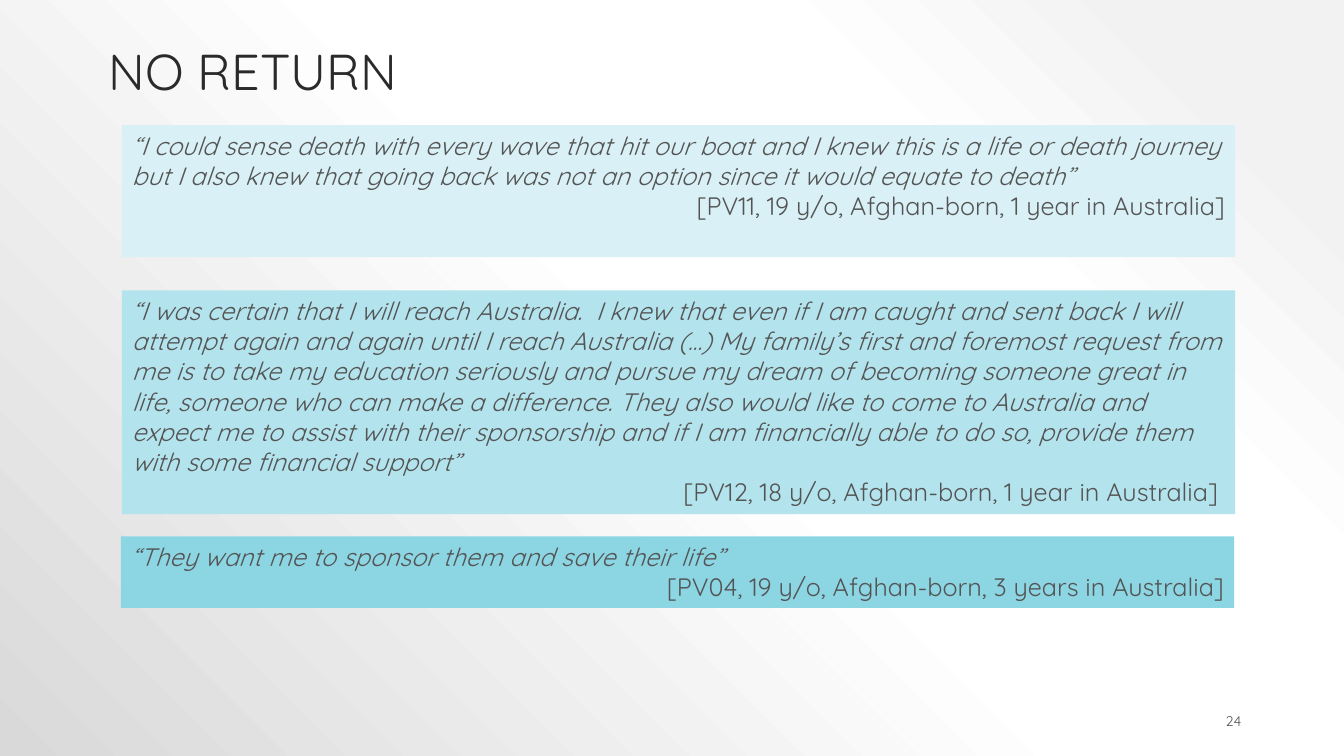
from pptx import Presentation
from pptx.dml.color import RGBColor
from pptx.enum.shapes import MSO_SHAPE
from pptx.enum.text import MSO_ANCHOR, PP_ALIGN
from pptx.oxml import parse_xml
from pptx.oxml.ns import nsdecls
from pptx.util import Inches, Pt

FONT = "Quicksand"
COLORS = {"title": "2A2A2A", "text": "545454",
          "pale": "D9F1F6", "mid": "B3E3ED", "deep": "8CD6E4"}
STOPS = [(10, "F2F2F2"), (28, "FFFFFF"), (48, "FFFFFF"), (100, "D9D9D9")]
TITLE = "NO RETURN"
NUMBER = "24"
WIDE = 11.04
QUOTES = [
    ("pale", 1.21, 1.24, 1.31,
     "“I could sense death with every wave that hit our boat and I knew this is a life or death "
     "journey but I also knew that going back was not an option since it would equate to death”",
     "[PV11, 19 y/o, Afghan-born, 1 year in Australia]"),
    ("mid", 1.21, 2.88, 2.22,
     "“I was certain that I will reach Australia.  I knew that even if I am caught and sent back "
     "I will attempt again and again until I reach Australia (…) My family’s first and foremost "
     "request from me is to take my education seriously and pursue my dream of becoming someone "
     "great in life, someone who can make a difference. They also would like to come to Australia "
     "and expect me to assist with their sponsorship and if I am financially able to do so, "
     "provide them with some financial support”",
     "[PV12, 18 y/o, Afghan-born, 1 year in Australia] "),
    ("deep", 1.2, 5.32, 0.71,
     "“They want me to sponsor them and save their life”",
     "[PV04, 19 y/o, Afghan-born, 3 years in Australia]"),
]


def write(para, text, size, color, align=PP_ALIGN.LEFT, italic=False):
    para.text = text
    para.alignment = align
    font = para.font
    font.name, font.size, font.italic = FONT, Pt(size), italic
    font.color.rgb = RGBColor.from_string(COLORS[color])


def paint(slide):
    stops = "".join(f'<a:gs pos="{pos * 1000}"><a:srgbClr val="{tone}"/></a:gs>'
                    for pos, tone in STOPS)
    back = parse_xml(
        f'<p:bg {nsdecls("p", "a")}><p:bgPr><a:gradFill rotWithShape="1">'
        f'<a:gsLst>{stops}</a:gsLst><a:path path="circle">'
        '<a:fillToRect l="100000" b="100000"/></a:path></a:gradFill>'
        '<a:effectLst/></p:bgPr></p:bg>')
    slide.element.cSld.insert(0, back)


def quote(slide, fill, left, top, high, words, source):
    box = slide.shapes.add_shape(
        MSO_SHAPE.RECTANGLE, Inches(left), Inches(top), Inches(WIDE), Inches(high))
    box.shadow.inherit = False
    box.fill.solid()
    box.fill.fore_color.rgb = RGBColor.from_string(COLORS[fill])
    box.line.fill.background()
    frame = box.text_frame
    frame.word_wrap = True
    frame.vertical_anchor = MSO_ANCHOR.TOP
    write(frame.paragraphs[0], words, 18, "text", italic=True)
    write(frame.add_paragraph(), source, 18, "text", PP_ALIGN.RIGHT)


def main():
    deck = Presentation()
    deck.slide_width, deck.slide_height = Inches(13.33), Inches(7.5)
    slide = deck.slides.add_slide(deck.slide_layouts[5])
    paint(slide)

    title = slide.shapes.title
    title.left, title.top = Inches(0.98), Inches(0.14)
    title.width, title.height = Inches(11.5), Inches(0.92)
    title.text_frame.vertical_anchor = MSO_ANCHOR.BOTTOM
    head = title.text_frame.paragraphs[0]
    write(head, TITLE, 36, "title")
    head.line_spacing = 0.9

    for item in QUOTES:
        quote(slide, *item)

    page = slide.shapes.add_textbox(
        Inches(8.83), Inches(6.95), Inches(3.58), Inches(0.4)).text_frame
    page.word_wrap = True
    page.vertical_anchor = MSO_ANCHOR.MIDDLE
    write(page.paragraphs[0], NUMBER, 10, "text", PP_ALIGN.RIGHT)

    deck.save("out.pptx")


if __name__ == "__main__":
    main()
